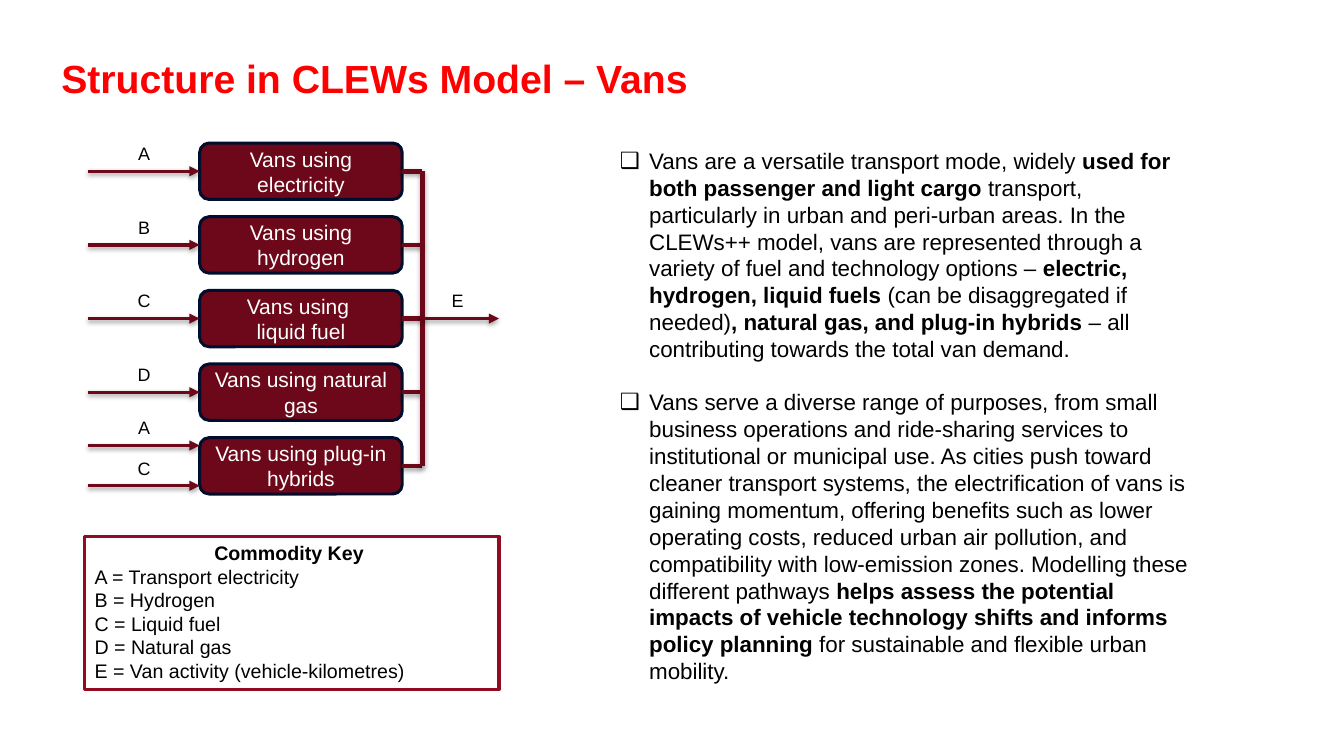
from lxml.etree import SubElement
from pptx import Presentation
from pptx.dml.color import RGBColor
from pptx.enum.shapes import MSO_CONNECTOR, MSO_SHAPE
from pptx.enum.text import MSO_ANCHOR, MSO_AUTO_SIZE, PP_ALIGN
from pptx.oxml.ns import qn
from pptx.util import Pt

RED = RGBColor(0xFF, 0x00, 0x00)
BLACK = RGBColor(0x00, 0x00, 0x00)
WHITE = RGBColor(0xFF, 0xFF, 0xFF)
MAROON = RGBColor(0x6C, 0x08, 0x19)
NAVY = RGBColor(0x00, 0x0D, 0x2C)
CRIMSON = RGBColor(0x91, 0x0C, 0x22)

TITLE = "Structure in CLEWs Model – Vans"
VANS = [
    "Vans using electricity",
    "Vans using hydrogen",
    "Vans using \vliquid fuel",
    "Vans using natural gas",
    "Vans using plug-in hybrids",
]
SINGLE_FUELS = ["A", "B", "C", "D"]
HYBRID_FUELS = [("A", 318.2), ("C", 347)]
OUTPUT = "E"
KEY_TITLE = "Commodity Key "
KEY = [
    "A = Transport electricity",
    "B = Hydrogen",
    "C = Liquid fuel",
    "D = Natural gas",
    "E = Van activity (vehicle-kilometres)",
]
BULLETS = [
    [
        ("Vans are a versatile transport mode, widely ", False),
        ("used for both passenger and light cargo", True),
        (" transport, particularly in urban and peri-urban areas. In the CLEWs++ model, "
         "vans are represented through a variety of fuel and technology options – ", False),
        ("electric, hydrogen, liquid fuels ", True),
        ("(can be disaggregated if needed)", False),
        (", natural gas, and plug-in hybrids", True),
        (" – all contributing towards the total van demand.", False),
    ],
    [
        ("Vans serve a diverse range of purposes, from small business operations and "
         "ride-sharing services to institutional or municipal use. As cities push toward "
         "cleaner transport systems, the electrification of vans is gaining momentum, "
         "offering benefits such as lower operating costs, reduced urban air pollution, and "
         "compatibility with low-emission zones. Modelling these different pathways ", False),
        ("helps assess the potential impacts of vehicle technology shifts and informs "
         "policy planning", True),
        (" for sustainable and flexible urban mobility.", False),
    ],
]

VAN_LEFT, VAN_TOP, VAN_WIDTH, VAN_HEIGHT, VAN_STEP = 142.6, 102.2, 144.7, 40.3, 52.6
FUEL_LEFT, BUS_X, OUTPUT_RIGHT = 62.6, 301.7, 356.4
ARROW_WEIGHT, BUS_WEIGHT = 2.41, 3.21
LABEL_WIDTH, LABEL_HEIGHT, LABEL_RISE = 59, 23, 24
FUEL_LABEL_LEFT, OUTPUT_LABEL_LEFT = 73.4, 297.4


def style_font(font, size, color, bold=False):
    formats = {"name": "Arial", "size": Pt(size), "bold": bold}
    for name, value in formats.items():
        setattr(font, name, value)
    font.color.rgb = color


def set_frame(box, side=7.2, anchor=MSO_ANCHOR.TOP, fit=MSO_AUTO_SIZE.NONE):
    formats = {
        "word_wrap": True, "auto_size": fit, "vertical_anchor": anchor,
        "margin_left": Pt(side), "margin_right": Pt(side),
        "margin_top": Pt(3.6), "margin_bottom": Pt(3.6),
    }
    for name, value in formats.items():
        setattr(box.text_frame, name, value)
    return box.text_frame


def write(para, text, size, color, bold=False, align=PP_ALIGN.LEFT):
    para.text = text
    para.alignment = align
    for span in para.runs:
        style_font(span.font, size, color, bold)


def add_text(page, left, top, width, height, **frame_formats):
    box = page.shapes.add_textbox(Pt(left), Pt(top), Pt(width), Pt(height))
    return set_frame(box, **frame_formats)


def add_box(page, preset, left, top, width, height, line_color, weight):
    box = page.shapes.add_shape(preset, Pt(left), Pt(top), Pt(width), Pt(height))
    box.shadow.inherit = False
    box.line.color.rgb = line_color
    box.line.width = Pt(weight)
    return box


def add_line(page, start, end, weight, arrow=False):
    line = page.shapes.add_connector(MSO_CONNECTOR.STRAIGHT, *map(Pt, start + end))
    line.line.color.rgb = MAROON
    line.line.width = Pt(weight)
    if arrow:
        SubElement(line.line._get_or_add_ln(), qn("a:tailEnd"), type="triangle")
    effects = SubElement(line._element.spPr, qn("a:effectLst"))
    shadow = SubElement(effects, qn("a:outerShdw"), blurRad=str(Pt(3.4)),
                        dist=str(Pt(1.7)), dir="5400000", rotWithShape="0")
    tint = SubElement(shadow, qn("a:srgbClr"), val="000000")
    SubElement(tint, qn("a:alpha"), val="37000")
    return line


def add_label(page, text, left, line_y):
    frame = add_text(page, left, line_y - LABEL_RISE, LABEL_WIDTH, LABEL_HEIGHT,
                     side=7.7, fit=MSO_AUTO_SIZE.SHAPE_TO_FIT_TEXT)
    write(frame.paragraphs[0], text, 12.8, BLACK, align=PP_ALIGN.CENTER)


def add_fuel(page, text, y):
    add_label(page, text, FUEL_LABEL_LEFT, y)
    return add_line(page, (FUEL_LEFT, y), (VAN_LEFT, y), ARROW_WEIGHT, True)


def add_diagram(page):
    middles = [VAN_TOP + VAN_HEIGHT / 2 + VAN_STEP * i for i in range(len(VANS))]
    van_boxes = []
    for text, middle in zip(VANS, middles):
        box = add_box(page, MSO_SHAPE.ROUNDED_RECTANGLE, VAN_LEFT, middle - VAN_HEIGHT / 2,
                      VAN_WIDTH, VAN_HEIGHT, NAVY, 2.14)
        box.fill.solid()
        box.fill.fore_color.rgb = MAROON
        frame = set_frame(box, side=7.7, anchor=MSO_ANCHOR.MIDDLE)
        write(frame.paragraphs[0], text, 15, WHITE, align=PP_ALIGN.CENTER)
        van_boxes.append(box)
        stub = add_line(page, (BUS_X, middle), (VAN_LEFT + VAN_WIDTH, middle), BUS_WEIGHT)
        stub.end_connect(box, 3)
    for text, middle, box in zip(SINGLE_FUELS, middles, van_boxes):
        add_fuel(page, text, middle).end_connect(box, 1)
    for text, y in HYBRID_FUELS:
        add_fuel(page, text, y)
    add_line(page, (BUS_X, middles[0]), (BUS_X, middles[-1]), BUS_WEIGHT)
    add_line(page, (BUS_X, middles[2]), (OUTPUT_RIGHT, middles[2]), ARROW_WEIGHT, True)
    add_label(page, OUTPUT, OUTPUT_LABEL_LEFT, middles[2])


def add_key(page):
    box = add_box(page, MSO_SHAPE.RECTANGLE, 60.5, 383, 296, 109.4, CRIMSON, 2.25)
    box.fill.background()
    frame = set_frame(box, fit=MSO_AUTO_SIZE.SHAPE_TO_FIT_TEXT)
    write(frame.paragraphs[0], KEY_TITLE, 14, BLACK, True, PP_ALIGN.CENTER)
    for entry in KEY:
        write(frame.add_paragraph(), entry, 14, BLACK)


def add_bullets(page):
    frame = add_text(page, 435.6, 101.5, 425.5, 395.3, fit=MSO_AUTO_SIZE.SHAPE_TO_FIT_TEXT)
    for index, spans in enumerate(BULLETS):
        para = frame.add_paragraph() if index else frame.paragraphs[0]
        if index:
            para.space_before = Pt(19)
        layout = para._p.get_or_add_pPr()
        layout.set("marL", str(Pt(21)))
        layout.set("indent", str(-Pt(21)))
        bullet_color = SubElement(layout, qn("a:buClr"))
        SubElement(bullet_color, qn("a:srgbClr"), val="000000")
        SubElement(layout, qn("a:buFont"), typeface="Arial")
        SubElement(layout, qn("a:buChar"), char="❑")
        for text, bold in spans:
            span = para.add_run()
            span.text = text
            style_font(span.font, 16, BLACK, bold)


def main():
    deck = Presentation()
    deck.slide_width, deck.slide_height = Pt(960), Pt(540)
    page = deck.slides.add_slide(deck.slide_layouts[6])
    title = add_text(page, 36.7, 22.3, 914.4, 54, anchor=MSO_ANCHOR.BOTTOM)
    write(title.paragraphs[0], TITLE, 28, RED, True)
    title.paragraphs[0].line_spacing = 0.9
    add_diagram(page)
    add_key(page)
    add_bullets(page)
    deck.save("out.pptx")


if __name__ == "__main__":
    main()
